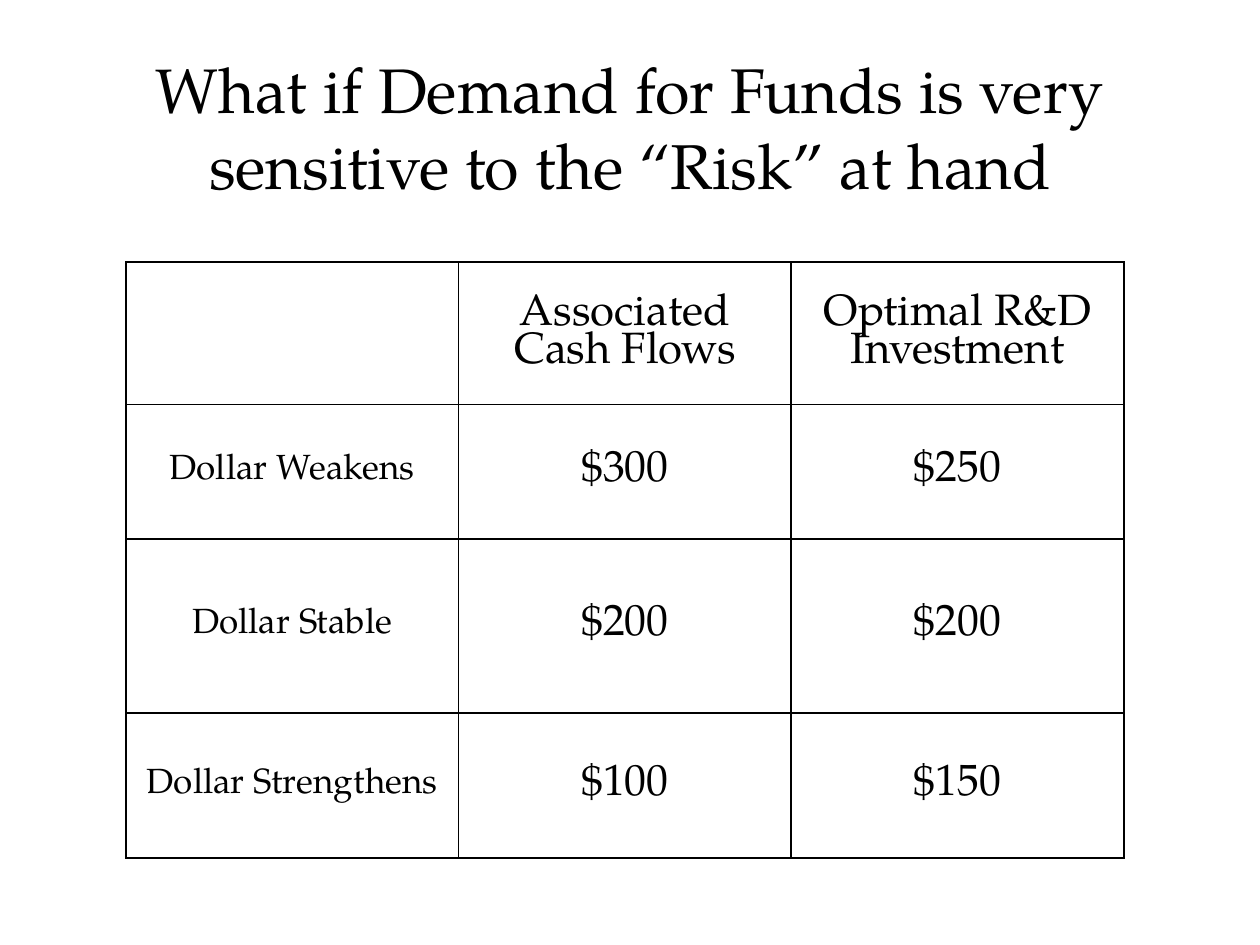
from typing import NamedTuple

from lxml import etree
from pptx import Presentation
from pptx.dml.color import RGBColor
from pptx.enum.text import MSO_ANCHOR, PP_ALIGN
from pptx.oxml.ns import qn
from pptx.util import Inches, Pt

MIDDLE = MSO_ANCHOR.MIDDLE
CENTER = PP_ALIGN.CENTER

FONT = "TeX Gyre Pagella"
COLORS = {"text": "000000", "border": "000000"}
TITLE_SIZE, LABEL_SIZE, VALUE_SIZE = 36, 20, 25
HEADER_SPACING = 0.85
TITLE_ONLY_LAYOUT = 5


class TableRow(NamedTuple):
    height: float
    label: str
    cash_flow: str
    investment: str


COLUMN_WIDTH = 2.64
ROWS = [
    TableRow(1.13, "", "Associated Cash Flows", "Optimal R&D Investment"),
    TableRow(1.07, "Dollar Weakens", "$300", "$250"),
    TableRow(1.38, "Dollar Stable", "$200", "$200"),
    TableRow(1.15, "Dollar Strengthens", "$100", "$150"),
]


def format_paragraph(paragraph, size: int) -> None:
    paragraph.alignment = CENTER
    paragraph.font.name = FONT
    paragraph.font.size = Pt(size)
    paragraph.font.color.rgb = RGBColor.from_string(COLORS["text"])


def add_borders(cell) -> None:
    """Draw a one-point line on each side; lines must precede the fill."""
    properties = cell._tc.get_or_add_tcPr()
    for position, side in enumerate(("a:lnL", "a:lnR", "a:lnT", "a:lnB")):
        line = etree.Element(qn(side), w=str(Pt(1)))
        fill = etree.SubElement(line, qn("a:solidFill"))
        etree.SubElement(fill, qn("a:srgbClr"), val=COLORS["border"])
        properties.insert(position, line)


def add_title(slide, text: str) -> None:
    title = slide.shapes.title
    title.left, title.top = Inches(0.75), Inches(0.5)
    title.width, title.height = Inches(8.5), Inches(1)
    title.text_frame.text = text
    title.text_frame.vertical_anchor = MIDDLE
    format_paragraph(title.text_frame.paragraphs[0], TITLE_SIZE)


def add_investment_table(slide, rows: list[TableRow]) -> None:
    column_count = len(TableRow._fields) - 1
    table = slide.shapes.add_table(
        len(rows), column_count, Inches(1), Inches(2.08),
        Inches(COLUMN_WIDTH * column_count),
        Inches(sum(row.height for row in rows)),
    ).table
    table.first_row = table.horz_banding = False
    for column in table.columns:
        column.width = Inches(COLUMN_WIDTH)
    for row_index, (height, *texts) in enumerate(rows):
        table.rows[row_index].height = Inches(height)
        for column_index, text in enumerate(texts):
            cell = table.cell(row_index, column_index)
            cell.text = text
            cell.vertical_anchor = MIDDLE
            cell.fill.background()
            add_borders(cell)
            paragraph = cell.text_frame.paragraphs[0]
            format_paragraph(paragraph, VALUE_SIZE if column_index else LABEL_SIZE)
            if row_index == 0:
                paragraph.line_spacing = HEADER_SPACING


def main() -> None:
    presentation = Presentation()
    presentation.slide_width, presentation.slide_height = Inches(10), Inches(7.5)
    slide = presentation.slides.add_slide(presentation.slide_layouts[TITLE_ONLY_LAYOUT])
    add_title(slide, "What if Demand for Funds is very sensitive to the “Risk” at hand")
    add_investment_table(slide, ROWS)
    presentation.save("out.pptx")


if __name__ == "__main__":
    main()
